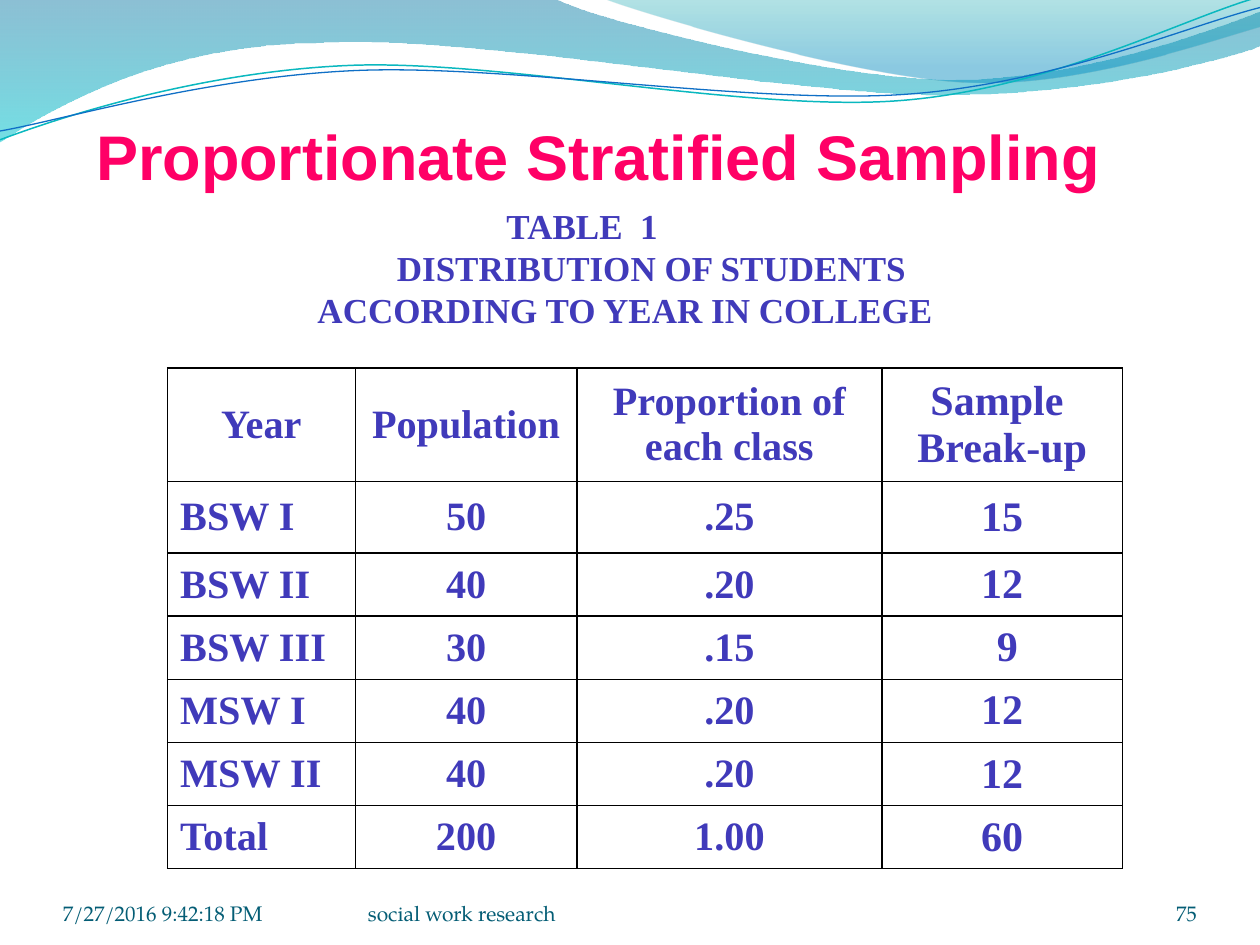
"""Build the proportionate stratified sampling slide."""
from lxml import etree
from pptx import Presentation
from pptx.dml.color import RGBColor
from pptx.enum.text import MSO_ANCHOR, PP_ALIGN
from pptx.oxml.ns import qn
from pptx.util import Inches, Pt

LEFT, CENTER, RIGHT = PP_ALIGN.LEFT, PP_ALIGN.CENTER, PP_ALIGN.RIGHT
TOP, MIDDLE, BOTTOM = MSO_ANCHOR.TOP, MSO_ANCHOR.MIDDLE, MSO_ANCHOR.BOTTOM
COLORS = {
    "title": "FF0066", "body": "403ABA", "footer": "045D75", "border": "000000",
    "wave_top": "0074A1", "wave_bottom": "00C6CF",
    "crest_top": "00A1A9", "crest_bottom": "008BBF",
    "teal": "0AB8BF", "blue": "0F6FC6",
}
TITLE = {"name": "Arial", "size": Pt(36), "bold": True}
CAPTION = {"name": "Times New Roman", "size": Pt(20), "bold": True}
CELL = {"name": "Times New Roman", "size": Pt(23), "bold": True}
LAST_CELL = {**CELL, "size": Pt(24)}
FOOTER = {"name": "TeX Gyre Pagella", "size": Pt(12), "bold": False}


def add_outline(shapes, start, segments, close):
    builder = shapes.build_freeform(Inches(start[0]), Inches(start[1]), scale=1.0)
    builder.add_line_segments([(Inches(x), Inches(y)) for *_, x, y in segments], close=close)
    sp = builder.convert_to_shape()
    sp.shadow.inherit = False
    for node, seg in zip(list(sp.element.iter(qn("a:lnTo"))), segments):
        if len(seg) == 6:
            curve = etree.Element(qn("a:cubicBezTo"))
            for x, y in zip(seg[::2], seg[1::2]):
                etree.SubElement(curve, qn("a:pt"), x=str(Inches(x) - sp.left),
                                 y=str(Inches(y) - sp.top))
            node.getparent().replace(node, curve)
    return sp


def write(tf, lines, fmt, color, align):
    for i, line in enumerate(lines):
        p = tf.paragraphs[0] if i == 0 else tf.add_paragraph()
        p.alignment = align
        r = p.add_run()
        r.text = line
        for attr, value in fmt.items():
            setattr(r.font, attr, value)
        r.font.color.rgb = RGBColor.from_string(COLORS[color])


prs = Presentation()
prs.slide_width, prs.slide_height = Inches(10), Inches(7.5)
s = prs.slides.add_slide(prs.slide_layouts[6])

waves = [
    ((0, -0.01),
     [(4.4, -0.01), (4.76, 0.17, 6.64, 0.63, 7.58, 0.63), (8.53, 0.63, 9.58, 0.26, 10, 0.09),
      (10.01, 0.36), (9.83, 0.44, 8.7, 0.76, 7.46, 0.75), (6.22, 0.75, 3.82, 0.28, 2.57, 0.34),
      (1.29, 0.35, 0.46, 0.83, -0.01, 1.13)],
     [("wave_top", 0, 45), ("wave_bottom", 1, 55)]),
    ((4.79, -0.01),
     [(5.09, 0.11, 6.82, 0.62, 7.69, 0.65), (8.56, 0.69, 9.61, 0.32, 10, 0.21), (10, 0)],
     [("crest_top", 0, 30), ("crest_bottom", 0.8, 45)]),
]
for start, segments, stops in waves:
    sp = add_outline(s.shapes, start, segments, True)
    sp.line.fill.background()
    sp.fill.gradient()
    sp.fill.gradient_angle = 270
    for stop, (color, position, opacity) in zip(sp.fill.gradient_stops, stops):
        stop.color.rgb = RGBColor.from_string(COLORS[color])
        stop.position = position
    for clr, (color, position, opacity) in zip(sp.element.spPr.iter(qn("a:srgbClr")), stops):
        etree.SubElement(clr, qn("a:alpha"), val=str(opacity * 1000))

ripples = [
    ((0, 1.11),
     [(0.48, 0.93, 1.58, 0.57, 2.77, 0.52), (3.95, 0.47, 5.93, 0.89, 7.13, 0.8),
      (8.33, 0.71, 9.38, 0.15, 9.98, -0.02)], "teal", 0.85),
    ((0, 1.04),
     [(0.47, 0.96, 1.64, 0.61, 2.83, 0.56), (4.03, 0.51, 5.97, 0.83, 7.17, 0.75),
      (8.36, 0.67, 9.41, 0.21, 10, 0.06)], "blue", 0.75),
]
for start, segments, color, width in ripples:
    sp = add_outline(s.shapes, start, segments, False)
    sp.fill.background()
    sp.line.color.rgb = RGBColor.from_string(COLORS[color])
    sp.line.width = Pt(width)

caption = ["TABLE  1", "DISTRIBUTION OF STUDENTS", "ACCORDING TO YEAR IN COLLEGE"]
texts = [
    ((0, 0.33, 9.5, 1.25), 0.05, BOTTOM, ["Proportionate Stratified Sampling"], TITLE, "title", CENTER),
    ((2.02, 1.62, 5.4, 1.35), 0, TOP, caption, CAPTION, "body", LEFT),
    ((0.5, 6.95, 2.33, 0.4), 0, BOTTOM, ["7/27/2016 9:42:18 PM"], FOOTER, "footer", LEFT),
    ((8.67, 6.95, 0.83, 0.4), 0, BOTTOM, ["75"], FOOTER, "footer", RIGHT),
    ((2.92, 6.95, 3.67, 0.4), 0, BOTTOM, ["social work research"], FOOTER, "footer", LEFT),
]
for box, inset, anchor, lines, fmt, color, align in texts:
    tf = s.shapes.add_textbox(*map(Inches, box)).text_frame
    tf.word_wrap = True
    tf.vertical_anchor = anchor
    for side in ("left", "top", "right", "bottom"):
        setattr(tf, f"margin_{side}", Inches(inset))
    write(tf, lines, fmt, color, align)
    if lines is caption:
        for p, indent in zip(tf.paragraphs, (2, 1.13, 0.5)):
            p._p.get_or_add_pPr().set("marL", str(Inches(indent)))

rows = [
    ("Year", "Population ", "Proportion of each class", "Sample \nBreak-up"),
    ("BSW I", "50", ".25", "15"),
    ("BSW II", "40", ".20", "12"),
    ("BSW III", "30", ".15", " 9"),
    ("MSW I", "40", ".20", "12"),
    ("MSW II", "40", ".20", "12"),
    ("Total", "200", "1.00", "60"),
]
widths = [1.49, 1.76, 2.42, 1.91]
heights = [0.9, 0.57] + [0.5] * 5
table = s.shapes.add_table(len(rows), len(widths), Inches(1.33), Inches(2.92),
                           Inches(sum(widths)), Inches(sum(heights))).table
table.first_row = table.horz_banding = False
for col, width in zip(table.columns, widths):
    col.width = Inches(width)
for row, height in zip(table.rows, heights):
    row.height = Inches(height)
for i, values in enumerate(rows):
    for j, value in enumerate(values):
        cell = table.cell(i, j)
        cell.vertical_anchor = MIDDLE
        fmt = LAST_CELL if j == len(widths) - 1 else CELL
        align = LEFT if i and j == 0 else CENTER
        write(cell.text_frame, value.split("\n"), fmt, "body", align)
        tcPr = cell._tc.get_or_add_tcPr()
        for side in ("lnL", "lnR", "lnT", "lnB"):
            ln = etree.SubElement(tcPr, qn(f"a:{side}"), w=str(Pt(1)))
            fill = etree.SubElement(ln, qn("a:solidFill"))
            etree.SubElement(fill, qn("a:srgbClr"), val=COLORS["border"])
        cell.fill.background()

prs.save("out.pptx")
